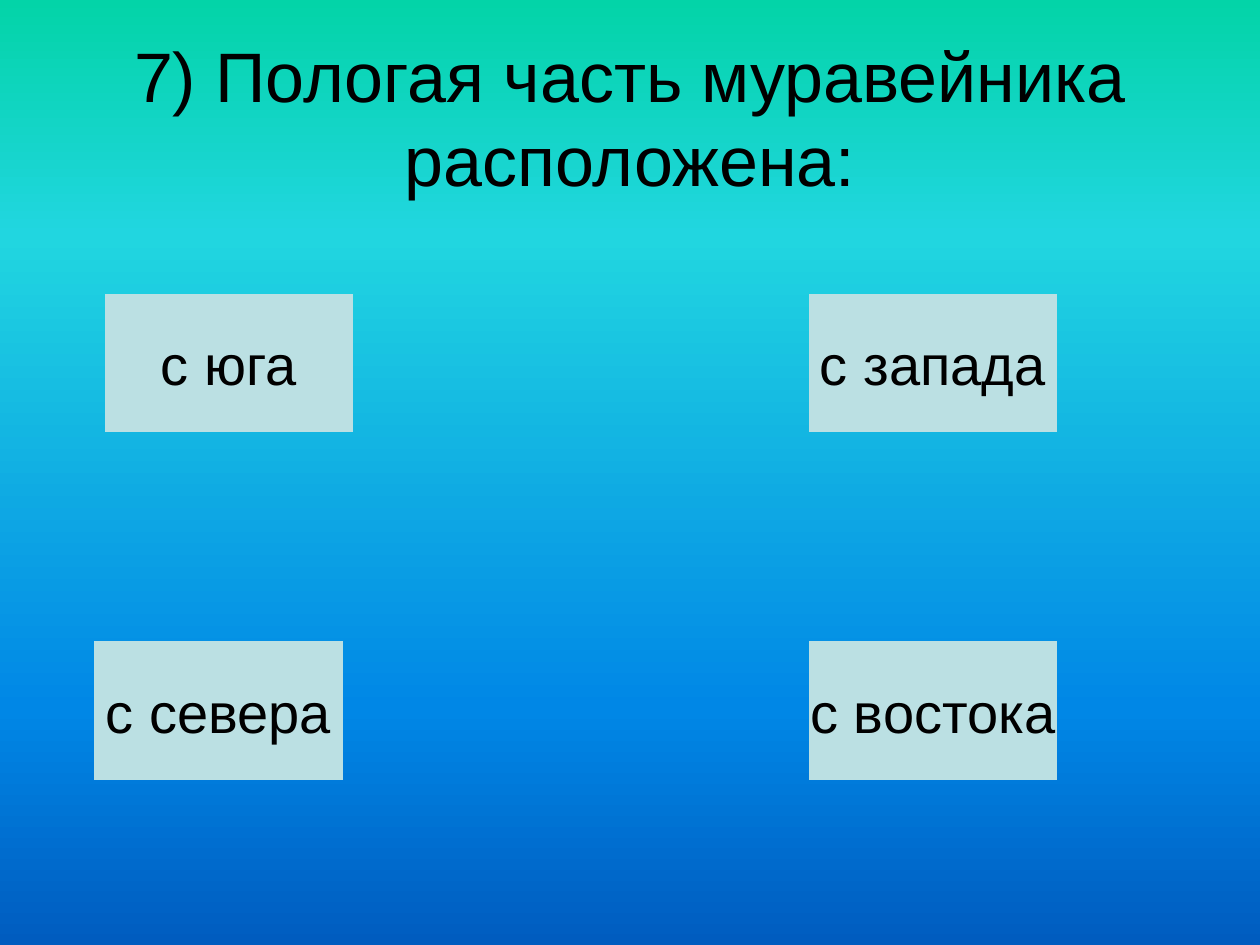
import pptx
import pptx.dml.color
import pptx.enum.shapes
import pptx.enum.text
import pptx.oxml
import pptx.oxml.ns
import pptx.util

Inches = pptx.util.Inches
COLORS = {"text": "000000", "button": "BBE0E3"}
GRADIENT = {0: "03D4A8", 25: "21D6E0", 75: "0087E6", 100: "005CBF"}


def set_background(s):
    """Fill the slide background with a vertical four-stop gradient."""
    fill = s.background.fill
    fill.gradient()
    fill.gradient_angle = 270
    stops = s.element.find(".//" + pptx.oxml.ns.qn("a:gsLst"))
    for stop in list(stops):
        stops.remove(stop)
    for pos, color in GRADIENT.items():
        stops.append(pptx.oxml.parse_xml(
            f'<a:gs {pptx.oxml.ns.nsdecls("a")} pos="{pos * 1000}">'
            f'<a:srgbClr val="{color}"/></a:gs>'))


def write_text(sp, text, size=32, wrap=True, font="Arial", color="text"):
    """Write centred text into a shape."""
    tf = sp.text_frame
    tf.word_wrap = wrap
    tf.vertical_anchor = pptx.enum.text.MSO_ANCHOR.MIDDLE
    p = tf.paragraphs[0]
    p.alignment = pptx.enum.text.PP_ALIGN.CENTER
    r = p.add_run()
    r.text = text
    r.font.name = font
    r.font.size = pptx.util.Pt(size)
    r.font.color.rgb = pptx.dml.color.RGBColor.from_string(COLORS[color])


def add_title(s, text, x, y, w, h):
    """Add the question heading in the given box."""
    sp = s.shapes.add_textbox(Inches(x), Inches(y), Inches(w), Inches(h))
    write_text(sp, text, size=40)


def add_answer(s, text, x, y, w, h):
    """Add one answer button in the given box."""
    sp = s.shapes.add_shape(
        pptx.enum.shapes.MSO_SHAPE.ACTION_BUTTON_CUSTOM,
        Inches(x), Inches(y), Inches(w), Inches(h))
    sp.shadow.inherit = False
    sp.fill.solid()
    sp.fill.fore_color.rgb = pptx.dml.color.RGBColor.from_string(COLORS["button"])
    sp.line.fill.background()
    write_text(sp, text, wrap=False)


def main():
    """Build and save the quiz slide."""
    prs = pptx.Presentation()
    prs.slide_width, prs.slide_height = Inches(10), Inches(7.5)
    s = prs.slides.add_slide(prs.slide_layouts[6])
    set_background(s)
    add_title(s, "7) Пологая часть муравейника расположена:", 0.5, 0.3, 9, 1.25)
    top, bottom, right = 2.33, 5.09, 6.42
    answers = [("с юга", 0.83, top), ("с запада", right, top),
               ("с востока", right, bottom), ("с севера", 0.75, bottom)]
    for text, x, y in answers:
        add_answer(s, text, x, y, 1.97, 1.1)
    prs.save("out.pptx")


if __name__ == "__main__":
    main()
